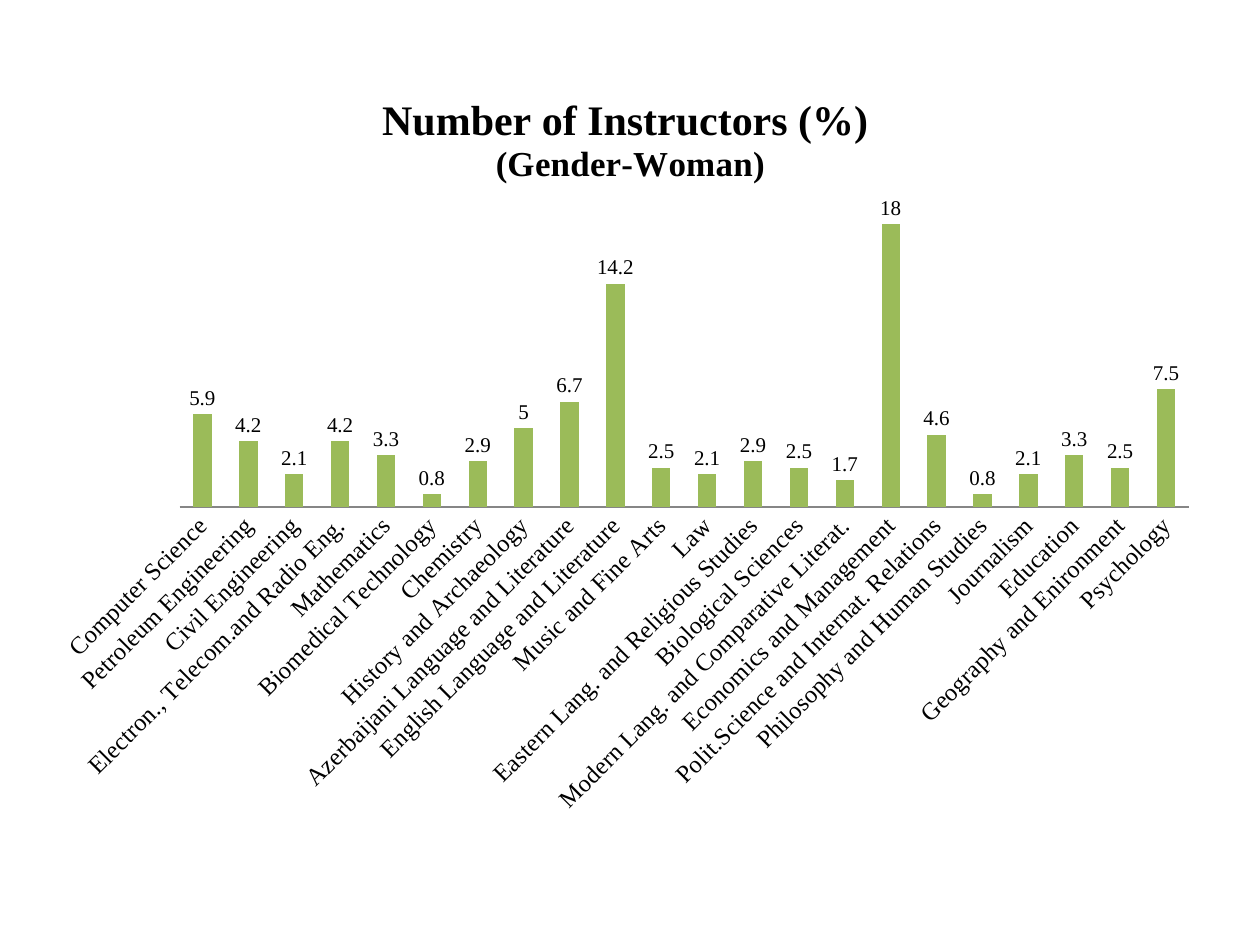
from lxml.etree import SubElement
from pptx import Presentation
from pptx.chart.data import CategoryChartData
from pptx.dml.color import RGBColor
from pptx.enum.chart import XL_CHART_TYPE, XL_LABEL_POSITION, XL_TICK_MARK
from pptx.oxml import parse_xml
from pptx.oxml.ns import nsdecls, qn
from pptx.util import Pt

# Content
TITLE = [("Number of Instructors (%) ", 24), ("(Gender-Woman)", 20)]
DATA = [
    ("Computer Science", 5.9),
    ("Petroleum Engineering", 4.2),
    ("Civil Engineering", 2.1),
    ("Electron., Telecom.and Radio Eng.", 4.2),
    ("Mathematics", 3.3),
    ("Biomedical Technology", 0.8),
    ("Chemistry", 2.9),
    ("History and Archaeology", 5),
    ("Azerbaijani Language and Literature", 6.7),
    ("English Language and Literature", 14.2),
    ("Music and Fine Arts", 2.5),
    ("Law", 2.1),
    ("Eastern Lang. and Religious Studies", 2.9),
    ("Biological Sciences", 2.5),
    ("Modern Lang. and Comparative Literat.", 1.7),
    ("Economics and Management", 18),
    ("Polit.Science and Internat. Relations", 4.6),
    ("Philosophy and Human Studies", 0.8),
    ("Journalism", 2.1),
    ("Education", 3.3),
    ("Geography and Enironment", 2.5),
    ("Psychology", 7.5),
]
PLOT = {"x": 0.102, "y": 0.159, "w": 0.891, "h": 0.406}
SERIF = "Times New Roman"
BLACK = RGBColor(0x00, 0x00, 0x00)
GREEN = RGBColor(0x9B, 0xBB, 0x59)
GRAY = RGBColor(0x86, 0x86, 0x86)


def style(font, size, name=SERIF, bold=False):
    font.size, font.name, font.bold = Pt(size), name, bold
    font.color.rgb = BLACK


deck = Presentation()
deck.slide_width, deck.slide_height = Pt(720), Pt(540)
slide = deck.slides.add_slide(deck.slide_layouts[6])

# Chart
data = CategoryChartData()
data.categories = [name for name, _ in DATA]
data.add_series("Series 1", [share for _, share in DATA])
chart = slide.shapes.add_chart(
    XL_CHART_TYPE.COLUMN_CLUSTERED, Pt(36), Pt(39.6), Pt(648), Pt(442.8), data
).chart
style(chart.font, 10, "Calibri")
chart.has_legend = False

# Title
chart.has_title = True
frame = chart.chart_title.text_frame
for i, (text, size) in enumerate(TITLE):
    para = frame.add_paragraph() if i else frame.paragraphs[0]
    run = para.add_run()
    run.text = text
    style(run.font, size, bold=True)
chart.chart_title.include_in_layout = False

# Axes
axis = chart.category_axis
axis.major_tick_mark = axis.minor_tick_mark = XL_TICK_MARK.NONE
axis.format.line.color.rgb = GRAY
style(axis.tick_labels.font, 14)
axis.tick_labels.font.bold = False
axis._element.find(qn("c:txPr")).find(qn("a:bodyPr")).set("rot", "-2700000")
scale = chart.value_axis
scale.minimum_scale, scale.maximum_scale = 0, 20
scale.has_major_gridlines = False
scale.visible = False

# Bars and value labels
plot = chart.plots[0]
plot.gap_width, plot.overlap, plot.vary_by_categories = 150, -25, False
fill = plot.series[0].format.fill
fill.solid()
fill.fore_color.rgb = GREEN
plot.has_data_labels = True
labels = plot.data_labels
labels.show_value = True
labels.position = XL_LABEL_POSITION.OUTSIDE_END
style(labels.font, 12)

# Inner plot area
area = chart._chartSpace.chart.plotArea
for old in area.findall(qn("c:layout")):
    area.remove(old)
layout = parse_xml(f"<c:layout {nsdecls('c')}><c:manualLayout/></c:layout>")
manual = layout[0]
rules = [("layoutTarget", "inner"), ("xMode", "edge"), ("yMode", "edge")]
for tag, val in rules + list(PLOT.items()):
    SubElement(manual, qn(f"c:{tag}")).set("val", str(val))
area.insert(0, layout)

deck.save("out.pptx")
